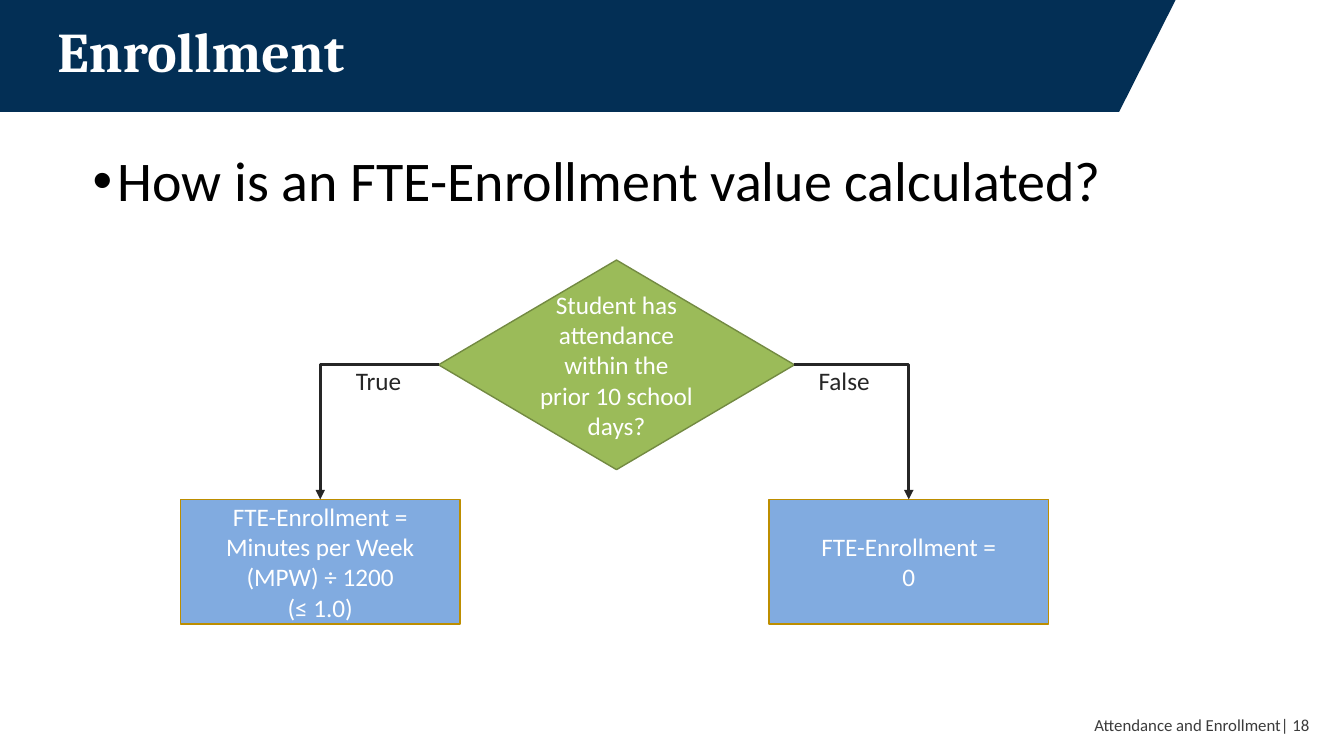
from lxml import etree
from pptx import Presentation
from pptx.dml.color import RGBColor
from pptx.enum.shapes import MSO_CONNECTOR, MSO_SHAPE
from pptx.enum.text import MSO_ANCHOR, MSO_AUTO_SIZE, PP_ALIGN
from pptx.oxml.ns import qn
from pptx.util import Inches, Pt

ELBOW = MSO_CONNECTOR.ELBOW
DIAMOND, PROCESS = MSO_SHAPE.FLOWCHART_DECISION, MSO_SHAPE.FLOWCHART_PROCESS
TOP, MIDDLE = MSO_ANCHOR.TOP, MSO_ANCHOR.MIDDLE
LEFT, CENTER, RIGHT = PP_ALIGN.LEFT, PP_ALIGN.CENTER, PP_ALIGN.RIGHT
NONE, GROW = MSO_AUTO_SIZE.NONE, MSO_AUTO_SIZE.SHAPE_TO_FIT_TEXT
HEAD, BODY = "Cambria", "Calibri"
COLORS = {
    "navy": "032F55", "white": "FFFFFF", "black": "000000", "ink": "262626",
    "gray": "3C3C3C", "green": "9BBB59", "moss": "738A42",
    "blue": "81ABE0", "gold": "BD8E00",
}
WIDE, HIGH = Inches(13.33), Inches(7.5)
SLIDE = (0, 0, WIDE, HIGH)


def color(name):
    """Return the named colour."""
    return RGBColor.from_string(COLORS[name])


def part(box, x, y, w, h):
    """Return an area given in percent of a box."""
    left, top, wide, high = box
    return (round(left + wide * x / 100), round(top + high * y / 100),
            round(wide * w / 100), round(high * h / 100))


def write(frame, lines, size, tint, align=LEFT, anchor=TOP, font=BODY, bold=False):
    """Fill a text frame, one paragraph per line."""
    frame.word_wrap = True
    frame.vertical_anchor = anchor
    for i, line in enumerate(lines):
        para = frame.paragraphs[0] if i == 0 else frame.add_paragraph()
        para.alignment = align
        run = para.add_run()
        run.text = line
        run.font.name, run.font.size, run.font.bold = font, Pt(size), bold
        run.font.color.rgb = color(tint)


def label(slide, box, text, size, tint, align=LEFT, anchor=TOP):
    """Add a text box and return its frame."""
    frame = slide.shapes.add_textbox(*box).text_frame
    write(frame, [text], size, tint, align, anchor)
    return frame


def banner(slide, box, text):
    """Draw the slanted title band and set the title on it."""
    left, top, wide, high = box
    edge = left + round(wide * 0.952)
    form = slide.shapes.build_freeform(left, top)
    form.add_line_segments([(left + wide, top), (edge, top + high), (left, top + high)])
    band = form.convert_to_shape()
    band.shadow.inherit = False
    band.fill.solid()
    band.fill.fore_color.rgb = color("navy")
    band.line.fill.background()
    title = slide.shapes.title
    title._element.addprevious(band._element)
    title.left, title.top, title.width, title.height = part(box, 4.03, 0, 98.6, 97.3)
    title.text_frame.auto_size = NONE
    write(title.text_frame, [text], 40, "white", anchor=MIDDLE, font=HEAD, bold=True)
    title.text_frame.paragraphs[0].line_spacing = 0.9


def bullet(slide, box, text):
    """Add the bulleted question."""
    para = label(slide, box, text, 40, "black").paragraphs[0]
    props = para._p.get_or_add_pPr()
    props.set("marL", str(Inches(0.25)))
    props.set("indent", str(-Inches(0.25)))
    etree.SubElement(props, qn("a:buFont")).set("typeface", "Arial")
    etree.SubElement(props, qn("a:buChar")).set("char", "•")
    para.line_spacing = 0.9


def node(slide, kind, box, lines, fill, edge):
    """Add one flowchart shape."""
    shape = slide.shapes.add_shape(kind, *box)
    shape.shadow.inherit = False
    shape.fill.solid()
    shape.fill.fore_color.rgb = color(fill)
    shape.line.color.rgb = color(edge)
    shape.line.width = Pt(1)
    write(shape.text_frame, lines, 18, "white", CENTER, MIDDLE)
    return shape


def arrow(slide, start, site, end):
    """Join a side of one shape to the top of another by a bent arrow."""
    link = slide.shapes.add_connector(ELBOW, 0, 0, 0, 0)
    link.begin_connect(start, site)
    link.end_connect(end, 0)
    link.line.color.rgb = color("ink")
    link.line.width = Pt(2.25)
    props = link._element.spPr
    props.find(qn("a:prstGeom")).set("prst", "bentConnector2")
    etree.SubElement(props.find(qn("a:ln")), qn("a:tailEnd")).set("type", "triangle")
    etree.SubElement(props, qn("a:effectLst"))


def flow(slide, box):
    """Draw the decision with its two outcomes."""
    test = node(slide, DIAMOND, part(box, 29.73, 0, 41, 57.6),
                ["Student has attendance within the prior 10 school days?"],
                "green", "moss")
    cases = [
        ("True", 1, 0, 19.05, 7.67,
         ["FTE-Enrollment = Minutes per Week (MPW) ÷ 1200", "(≤ 1.0)"]),
        ("False", 3, 67.8, 72.36, 8.25, ["FTE-Enrollment =", "0"]),
    ]
    for name, site, x, tag, wide, lines in cases:
        result = node(slide, PROCESS, part(box, x, 65.8, 32.2, 34.2),
                      lines, "blue", "gold")
        arrow(slide, test, site, result)
        frame = label(slide, part(box, tag, 27.7, wide, 11.08), name, 18, "ink")
        frame.word_wrap = False
        frame.auto_size = GROW


def main():
    """Build and save the slide."""
    deck = Presentation()
    deck.slide_width, deck.slide_height = WIDE, HIGH
    slide = deck.slides.add_slide(deck.slide_layouts[5])
    banner(slide, part(SLIDE, 0, 0, 87.47, 14.8), "Enrollment")
    bullet(slide, part(SLIDE, 6.15, 19.6, 86.27, 63.47),
           "How is an FTE-Enrollment value calculated?")
    flow(slide, part(SLIDE, 13.43, 34.4, 64.59, 48.13))
    label(slide, part(SLIDE, 75.69, 93.2, 22.5, 5.33),
          "Attendance and Enrollment| 18", 12, "gray", RIGHT, MIDDLE)
    deck.save("out.pptx")


if __name__ == "__main__":
    main()
